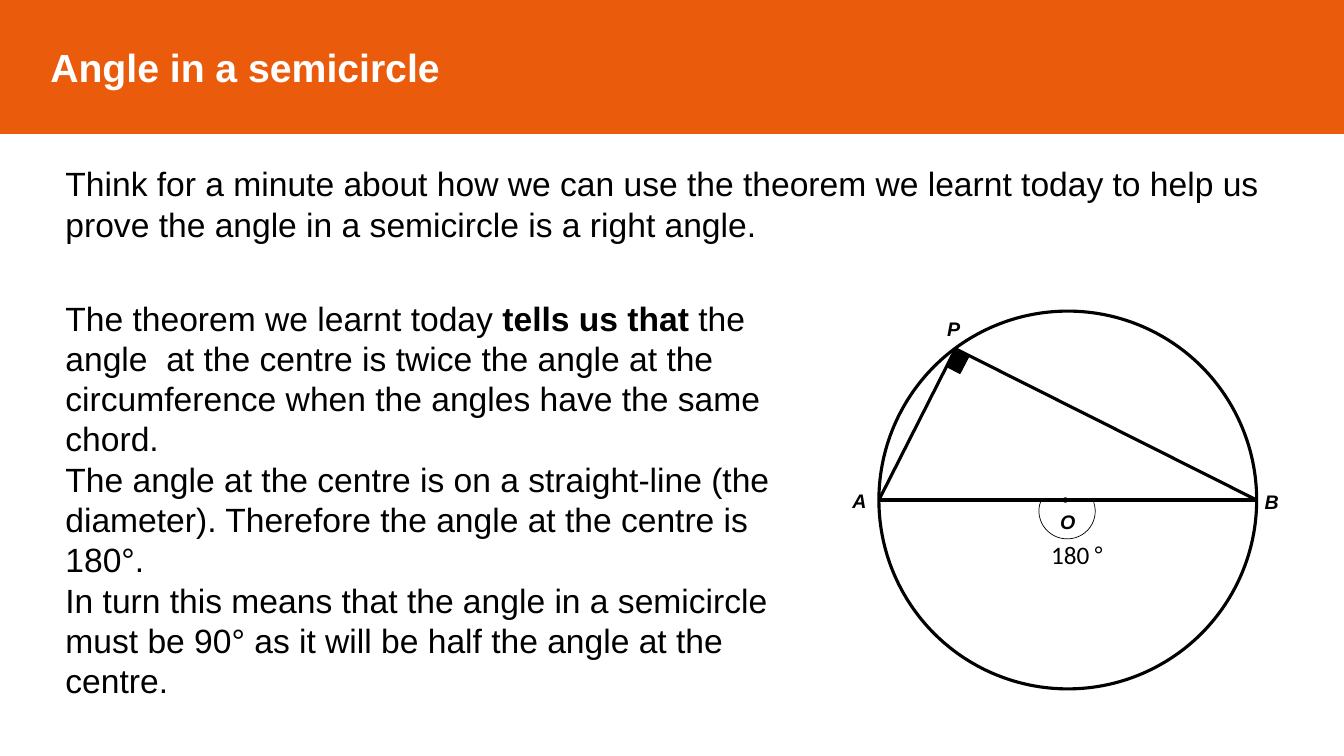
from dataclasses import dataclass

from lxml.etree import SubElement
from pptx import Presentation
from pptx.dml.color import RGBColor
from pptx.enum.shapes import MSO_CONNECTOR, MSO_SHAPE
from pptx.enum.text import MSO_ANCHOR, MSO_AUTO_SIZE, PP_ALIGN
from pptx.oxml.ns import qn
from pptx.util import Cm, Pt

ORANGE = "EA5B0C"
BLACK = "000000"
WHITE = "FFFFFF"


@dataclass
class Span:
    text: str
    bold: bool = False


@dataclass
class Label:
    paragraphs: list[list[Span]]
    left: float
    top: float
    width: float
    height: float
    size: float = 24
    font: str = "Arial"
    italic: bool = False
    wrap: bool = True


@dataclass
class Figure:
    kind: MSO_SHAPE
    left: float
    top: float
    width: float
    height: float
    line_width: float
    fill: str | None = None
    line: str = BLACK
    rotation: float = 0
    adjustments: tuple[float, ...] = ()


@dataclass
class Point:
    x: float
    y: float


def color(value: str) -> RGBColor:
    return RGBColor.from_string(value)


def add_label(page, label: Label) -> None:
    box = page.shapes.add_textbox(Cm(label.left), Cm(label.top), Cm(label.width), Cm(label.height))
    frame = box.text_frame
    frame.word_wrap = label.wrap
    frame.auto_size = MSO_AUTO_SIZE.SHAPE_TO_FIT_TEXT
    for index, spans in enumerate(label.paragraphs):
        para = frame.add_paragraph() if index else frame.paragraphs[0]
        for span in spans:
            run = para.add_run()
            run.text = span.text
            run.font.name = label.font
            run.font.size = Pt(label.size)
            run.font.bold = span.bold
            run.font.italic = label.italic
            run.font.color.rgb = color(BLACK)


def add_figure(page, figure: Figure):
    shape = page.shapes.add_shape(
        figure.kind, Cm(figure.left), Cm(figure.top), Cm(figure.width), Cm(figure.height)
    )
    shape.shadow.inherit = False
    shape.rotation = figure.rotation
    for index, value in enumerate(figure.adjustments):
        shape.adjustments[index] = value
    if figure.fill:
        shape.fill.solid()
        shape.fill.fore_color.rgb = color(figure.fill)
    else:
        shape.fill.background()
    shape.line.color.rgb = color(figure.line)
    shape.line.width = Pt(figure.line_width)
    return shape


def add_side(page, start: Point, end: Point) -> None:
    side = page.shapes.add_connector(
        MSO_CONNECTOR.STRAIGHT, Cm(start.x), Cm(start.y), Cm(end.x), Cm(end.y)
    )
    side.line.color.rgb = color(BLACK)
    side.line.width = Pt(2.25)
    SubElement(side._element.spPr, qn("a:effectLst"))


def add_header(page, title: str) -> None:
    header = add_figure(page, Figure(MSO_SHAPE.RECTANGLE, 0, 0, 33.87, 3.35, 1, ORANGE, ORANGE))
    frame = header.text_frame
    frame.text = title
    frame.margin_left = Cm(1.27)
    frame.vertical_anchor = MSO_ANCHOR.MIDDLE
    para = frame.paragraphs[0]
    para.alignment = PP_ALIGN.LEFT
    font = para.runs[0].font
    font.name = "Arial"
    font.size = Pt(28)
    font.bold = True
    font.color.rgb = color(WHITE)


INTRODUCTION = Label(
    [[Span("Think for a minute about how we can use the theorem we learnt today to help us "
           "prove the angle in a semicircle is a right angle.")]],
    1.4, 3.99, 31.93, 2.31,
)
PROOF = Label(
    [
        [
            Span("The theorem we learnt today"),
            Span(" tells us that ", bold=True),
            Span("the angle  at the centre is twice the angle at the circumference "
                 "when the angles have the same chord."),
        ],
        [Span("The angle at the centre is on a straight-line (the diameter). "
              "Therefore the angle at the centre is 180°.")],
        [Span("In turn this means that the angle in a semicircle must be 90° "
              "as it will be half the angle at the centre.")],
    ],
    1.4, 7.37, 19.84, 10.52,
)
DIAMETER = 9.52
A = Point(22.15, 12.6)
B = Point(A.x + DIAMETER, A.y)
P = Point(24.08, 8.79)
CIRCLE = Figure(MSO_SHAPE.OVAL, A.x, A.y - DIAMETER / 2, DIAMETER, DIAMETER, 2.25)
CENTRE = Figure(MSO_SHAPE.OVAL, 26.8, 12.55, 0.1, 0.1, 1, BLACK)
CENTRE_ANGLE = Figure(
    MSO_SHAPE.ARC, 26.19, 12.17, 1.4, 1.42, 0.5, rotation=102.2, adjustments=(143.6, 61.08)
)
RIGHT_ANGLE = Figure(MSO_SHAPE.RECTANGLE, 23.95, 8.84, 0.38, 0.51, 1, BLACK, rotation=27.6)
POINT_NAMES = {
    "P": Point(23.62, 7.85),
    "A": Point(21.23, 12.19),
    "B": Point(31.62, 12.22),
    "O": Point(26.47, 12.73),
}


def main() -> None:
    deck = Presentation()
    deck.slide_width, deck.slide_height = Cm(33.87), Cm(19.05)
    page = deck.slides.add_slide(deck.slide_layouts[6])
    add_label(page, INTRODUCTION)
    add_header(page, "Angle in a semicircle")
    add_label(page, PROOF)
    add_figure(page, CIRCLE)
    for start, end in ((A, B), (B, P), (P, A)):
        add_side(page, start, end)
    add_figure(page, CENTRE)
    for name, corner in POINT_NAMES.items():
        spans = [Span(name, bold=True)]
        add_label(page, Label([spans], corner.x, corner.y, 1.6, 0.86, 14, italic=True))
    add_figure(page, CENTRE_ANGLE)
    add_label(page, Label([[Span("180")]], 26.24, 13.46, 2.01, 1.02, 18, "Calibri"))
    add_label(page, Label([[Span("°")]], 27.31, 13.46, 0.76, 1.02, 18, wrap=False))
    add_figure(page, RIGHT_ANGLE)
    deck.save("out.pptx")


if __name__ == "__main__":
    main()
